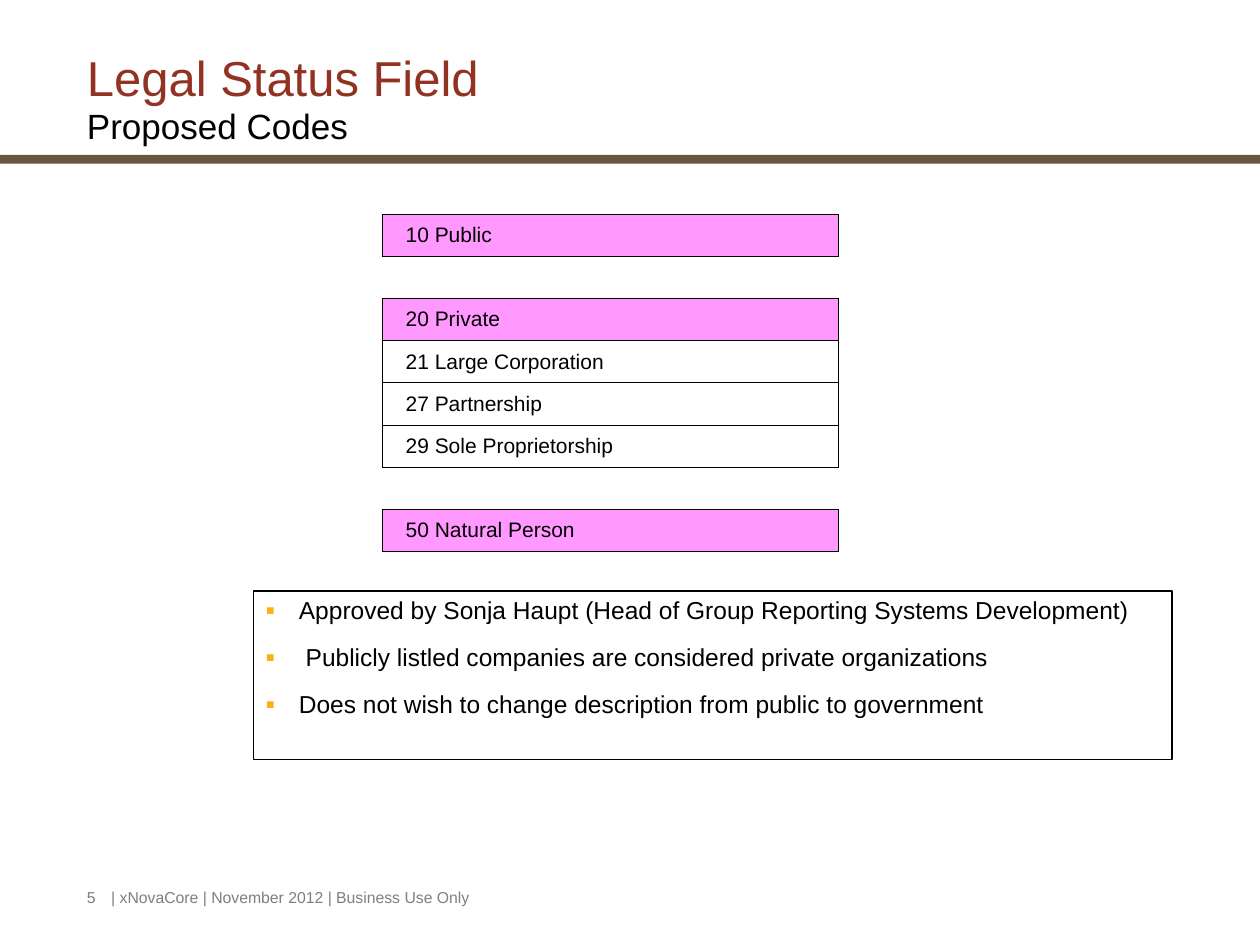
from lxml.etree import SubElement
from pptx import Presentation
from pptx.dml.color import RGBColor
from pptx.enum.shapes import MSO_SHAPE
from pptx.enum.text import MSO_ANCHOR, MSO_AUTO_SIZE, PP_ALIGN
from pptx.oxml.ns import qn
from pptx.util import Pt

# Content
HEADING = "Legal Status Field"
SUBHEADING = "Proposed Codes"
CODE_GROUPS = [
    ["10 Public"],
    ["20 Private", "21 Large Corporation", "27 Partnership", "29 Sole Proprietorship"],
    ["50 Natural Person"],
]
REMARKS = [
    "Approved by Sonja Haupt (Head of Group Reporting Systems Development)",
    " Publicly listled companies are considered private organizations",
    "Does not wish to change description from public to government",
]
FOOTERS = [  # text, left, width
    (" | xNovaCore | November 2012 | Business Use Only", 54, 510),
    ("5", 42.5, 31.5),
]

COLORS = {
    "heading": "923222",
    "text": "000000",
    "band": "6A5540",
    "group": "FF99FF",
    "bullet": "FCAF17",
    "footer": "7F7F7F",
    "paper": "FFFFFF",
}
FONT = "Arial"
ROW_HEIGHT = 24.1


def rgb(name):
    return RGBColor.from_string(COLORS[name])


def style(runs, size, color="text"):
    for run in runs:
        run.font.name = FONT
        run.font.size = Pt(size)
        run.font.color.rgb = rgb(color)


def add_box(slide, left, top, width, height, fill=None):
    box = slide.shapes.add_shape(
        MSO_SHAPE.RECTANGLE, Pt(left), Pt(top), Pt(width), Pt(height))
    box.shadow.inherit = False
    if fill:
        box.fill.solid()
        box.fill.fore_color.rgb = rgb(fill)
    else:
        box.fill.background()
    return box


def set_borders(cell, drawn_sides):
    properties = cell._tc.get_or_add_tcPr()
    for side in "LRTB":
        line = SubElement(properties, qn(f"a:ln{side}"), w=str(Pt(0.5)))
        if side in drawn_sides:
            fill = SubElement(line, qn("a:solidFill"))
            SubElement(fill, qn("a:srgbClr"), val=COLORS["text"])
        else:
            SubElement(line, qn("a:noFill"))


def set_bullet(paragraph):
    properties = paragraph._p.get_or_add_pPr()
    properties.set("marL", str(Pt(19)))
    properties.set("indent", str(Pt(-19)))
    color = SubElement(properties, qn("a:buClr"))
    SubElement(color, qn("a:srgbClr"), val=COLORS["bullet"])
    SubElement(properties, qn("a:buSzPct"), val="110000")
    SubElement(properties, qn("a:buFont"), typeface=FONT)
    SubElement(properties, qn("a:buChar"), char="▪")


def add_title(slide):
    title = slide.shapes.title
    title.left, title.top, title.width, title.height = Pt(42.5), Pt(25), Pt(655), Pt(63)
    frame = title.text_frame
    frame.text = f"{HEADING}\v{SUBHEADING}"
    frame.auto_size = MSO_AUTO_SIZE.NONE
    frame.vertical_anchor = MSO_ANCHOR.BOTTOM
    paragraph = frame.paragraphs[0]
    paragraph.alignment = PP_ALIGN.LEFT
    paragraph.line_spacing = 0.95
    heading, subheading = paragraph.runs
    style([heading], 28, "heading")
    style([subheading], 20)


def add_footers(slide):
    for text, left, width in FOOTERS:
        footer = slide.shapes.add_textbox(Pt(left), Pt(504), Pt(width), Pt(19.5))
        footer.text_frame.word_wrap = True
        footer.text_frame.text = text
        style(footer.text_frame.paragraphs[0].runs, 9, "footer")


def add_codes(slide):
    # One empty row separates the groups
    rows = []
    for group in CODE_GROUPS:
        if rows:
            rows.append((None, False))
        rows += [(code, code == group[0]) for code in group]

    codes = slide.shapes.add_table(
        len(rows), 1, Pt(218.3), Pt(122.4), Pt(260.6), Pt(ROW_HEIGHT * len(rows))).table
    codes.first_row = codes.horz_banding = False
    for index, (code, is_group) in enumerate(rows):
        codes.rows[index].height = Pt(ROW_HEIGHT)
        cell = codes.cell(index, 0)
        set_borders(cell, "LRTB" if code else "TB")
        cell.margin_left = Pt(13.5)
        cell.margin_right = cell.margin_top = cell.margin_bottom = 0
        cell.vertical_anchor = MSO_ANCHOR.MIDDLE
        if is_group:
            cell.fill.solid()
            cell.fill.fore_color.rgb = rgb("group")
        else:
            cell.fill.background()
        if code:
            cell.text_frame.text = code
            style(cell.text_frame.paragraphs[0].runs, 12)


def add_remarks(slide):
    remarks = add_box(slide, 144.7, 337.7, 525, 96.5)
    remarks.line.color.rgb = rgb("text")
    remarks.line.width = Pt(0.75)
    frame = remarks.text_frame
    frame.word_wrap = True
    frame.vertical_anchor = MSO_ANCHOR.TOP
    frame.text = "\n".join(REMARKS)
    for index, paragraph in enumerate(frame.paragraphs):
        set_bullet(paragraph)
        paragraph.alignment = PP_ALIGN.LEFT
        paragraph.line_spacing = 0.95
        if index:
            paragraph.space_before = Pt(11)
        style(paragraph.runs, 14)


def main():
    deck = Presentation()
    deck.slide_width, deck.slide_height = Pt(720), Pt(540)
    slide = deck.slides.add_slide(deck.slide_layouts[5])
    slide.background.fill.solid()
    slide.background.fill.fore_color.rgb = rgb("paper")

    # Band under the title
    band = add_box(slide, 0, 88.5, 720, 5, "band")
    band.line.fill.background()

    add_title(slide)
    add_footers(slide)
    add_codes(slide)
    add_remarks(slide)
    deck.save("out.pptx")


if __name__ == "__main__":
    main()
